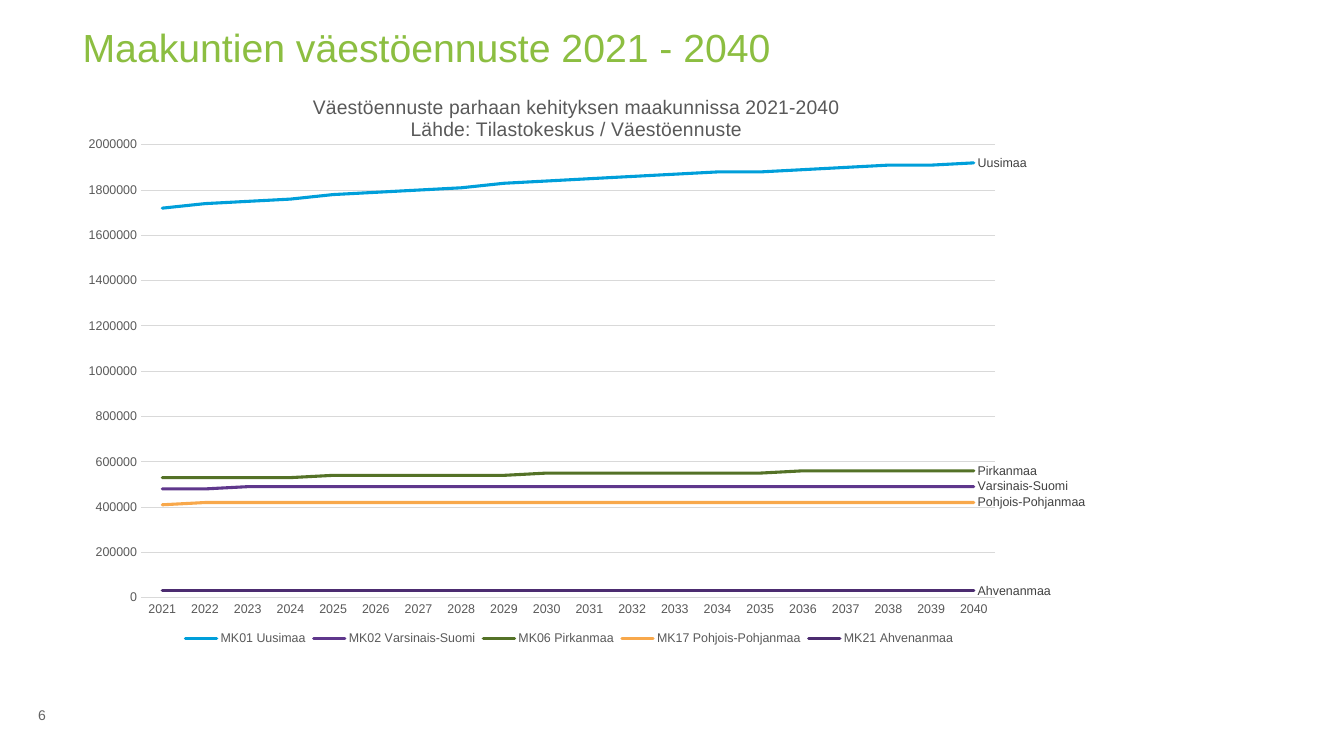
from dataclasses import dataclass

from lxml import etree
from pptx import Presentation
from pptx.chart.data import CategoryChartData
from pptx.dml.color import RGBColor
from pptx.enum.chart import (XL_CHART_TYPE, XL_LABEL_POSITION, XL_LEGEND_POSITION,
                             XL_TICK_MARK)
from pptx.enum.text import MSO_ANCHOR, MSO_AUTO_SIZE, PP_ALIGN
from pptx.oxml.ns import qn
from pptx.util import Pt

LINE_CHART = XL_CHART_TYPE.LINE
LABEL_RIGHT = XL_LABEL_POSITION.RIGHT
LEGEND_BOTTOM = XL_LEGEND_POSITION.BOTTOM
NO_TICK = XL_TICK_MARK.NONE
TOP, MIDDLE = MSO_ANCHOR.TOP, MSO_ANCHOR.MIDDLE
NO_AUTOFIT = MSO_AUTO_SIZE.NONE
LEFT = PP_ALIGN.LEFT

FONT = "Arial"
TITLE_ONLY = 5
GREEN = RGBColor(0x8C, 0xBE, 0x41)
PAGE_GRAY = RGBColor(0x64, 0x64, 0x64)
CHART_GRAY = RGBColor(0x59, 0x59, 0x59)
LABEL_GRAY = RGBColor(0x40, 0x40, 0x40)
GRID_GRAY = RGBColor(0xD9, 0xD9, 0xD9)
BLUE = RGBColor(0x00, 0x9F, 0xDA)
PURPLE = RGBColor(0x5F, 0x37, 0x8C)
DARK_GREEN = RGBColor(0x54, 0x72, 0x27)
ORANGE = RGBColor(0xF8, 0xA8, 0x4B)
DARK_PURPLE = RGBColor(0x4C, 0x2C, 0x70)

YEARS = range(2021, 2041)
CHART_TITLE = ("Väestöennuste parhaan kehityksen maakunnissa 2021-2040",
               "Lähde: Tilastokeskus / Väestöennuste")


@dataclass(frozen=True)
class Region:
    code: str
    name: str
    color: RGBColor
    thousands: list[int]


REGIONS = [
    Region("MK01", "Uusimaa", BLUE,
           [1720, 1740, 1750, 1760, 1780, 1790, 1800, 1810, 1830, 1840,
            1850, 1860, 1870, 1880, 1880, 1890, 1900, 1910, 1910, 1920]),
    Region("MK02", "Varsinais-Suomi", PURPLE, [480] * 2 + [490] * 18),
    Region("MK06", "Pirkanmaa", DARK_GREEN,
           [530] * 4 + [540] * 5 + [550] * 6 + [560] * 5),
    Region("MK17", "Pohjois-Pohjanmaa", ORANGE, [410] + [420] * 19),
    Region("MK21", "Ahvenanmaa", DARK_PURPLE, [30] * 20),
]


def style_font(font, size: float, color: RGBColor) -> None:
    font.name = FONT
    font.size = Pt(size)
    font.bold = False
    font.color.rgb = color


def write_text(frame, text: str, *, size: float, color: RGBColor, anchor) -> None:
    frame.auto_size = NO_AUTOFIT
    frame.word_wrap = True
    frame.vertical_anchor = anchor
    para = frame.paragraphs[0]
    para.alignment = LEFT
    span = para.add_run()
    span.text = text
    style_font(span.font, size, color)


def place(shape, left: float, top: float, width: float, height: float) -> None:
    shape.left, shape.top = Pt(left), Pt(top)
    shape.width, shape.height = Pt(width), Pt(height)


def set_layout(parent, follower: str, **settings: object) -> None:
    """Give a chart part a manual layout, put just before the follower element."""
    for old in parent.findall(qn("c:layout")):
        parent.remove(old)
    layout = etree.Element(qn("c:layout"))
    manual = etree.SubElement(layout, qn("c:manualLayout"))
    for name, value in settings.items():
        etree.SubElement(manual, qn(f"c:{name}")).set("val", str(value))
    parent.find(qn(follower)).addprevious(layout)


def format_title(chart) -> None:
    chart.has_title = True
    title = chart.chart_title
    frame = title.text_frame
    for number, text in enumerate(CHART_TITLE):
        para = frame.add_paragraph() if number else frame.paragraphs[0]
        span = para.add_run()
        span.text = text
        style_font(span.font, 14, CHART_GRAY)
    set_layout(title._element, "c:overlay", xMode="edge", yMode="edge", x=0.23, y=0.03)


def format_legend(chart) -> None:
    chart.has_legend = True
    legend = chart.legend
    legend.position = LEGEND_BOTTOM
    legend.include_in_layout = False
    style_font(legend.font, 9, CHART_GRAY)
    set_layout(legend._element, "c:overlay", xMode="edge", yMode="edge", x=0.1, y=0.96)


def format_axes(chart) -> None:
    for axis in (chart.category_axis, chart.value_axis):
        axis.major_tick_mark = axis.minor_tick_mark = NO_TICK
        style_font(axis.tick_labels.font, 9, CHART_GRAY)
    values = chart.value_axis
    values.minimum_scale, values.maximum_scale = 0, 2000000
    values.major_unit = 200000
    values.has_major_gridlines = True
    values.format.line.fill.background()
    for line in (chart.category_axis.format.line, values.major_gridlines.format.line):
        line.color.rgb = GRID_GRAY
        line.width = Pt(0.75)


def format_series(series, region: Region) -> None:
    series.smooth = False
    line = series.format.line
    line.color.rgb = region.color
    line.width = Pt(2.25)
    line._get_or_add_ln().set("cap", "rnd")
    label = series.points[len(YEARS) - 1].data_label
    span = label.text_frame.paragraphs[0].add_run()
    span.text = region.name
    style_font(span.font, 9, LABEL_GRAY)
    label.position = LABEL_RIGHT


def add_forecast_chart(page) -> None:
    data = CategoryChartData(number_format="General")
    data.categories = [str(year) for year in YEARS]
    for region in REGIONS:
        data.add_series(f"{region.code} {region.name}",
                        [value * 1000 for value in region.thousands])
    chart = page.shapes.add_chart(LINE_CHART, Pt(59.04), Pt(53.28), Pt(716.4),
                                  Pt(411.12), data).chart
    chart.font.name = FONT
    chart.font.size = Pt(10)
    format_title(chart)
    format_legend(chart)
    format_axes(chart)
    chart.plots[0].vary_by_categories = False
    for series, region in zip(chart.plots[0].series, REGIONS):
        format_series(series, region)
    set_layout(chart._chartSpace.chart.plotArea, "c:lineChart", layoutTarget="inner",
               xMode="edge", yMode="edge", x=0.059, y=0.122, w=0.865, h=0.787)


def main() -> None:
    deck = Presentation()
    deck.slide_width, deck.slide_height = Pt(960), Pt(540)
    page = deck.slides.add_slide(deck.slide_layouts[TITLE_ONLY])

    title = page.shapes.title
    place(title, 59.04, 16.56, 846.72, 70.56)
    frame = title.text_frame
    frame.margin_left = frame.margin_top = frame.margin_right = frame.margin_bottom = 0
    write_text(frame, "Maakuntien väestöennuste 2021 - 2040",
               size=28, color=GREEN, anchor=TOP)

    add_forecast_chart(page)

    number_box = page.shapes.add_textbox(Pt(20.16), Pt(496.8), Pt(45.36), Pt(28.08))
    write_text(number_box.text_frame, "6", size=10, color=PAGE_GRAY, anchor=MIDDLE)

    deck.save("out.pptx")


if __name__ == "__main__":
    main()
